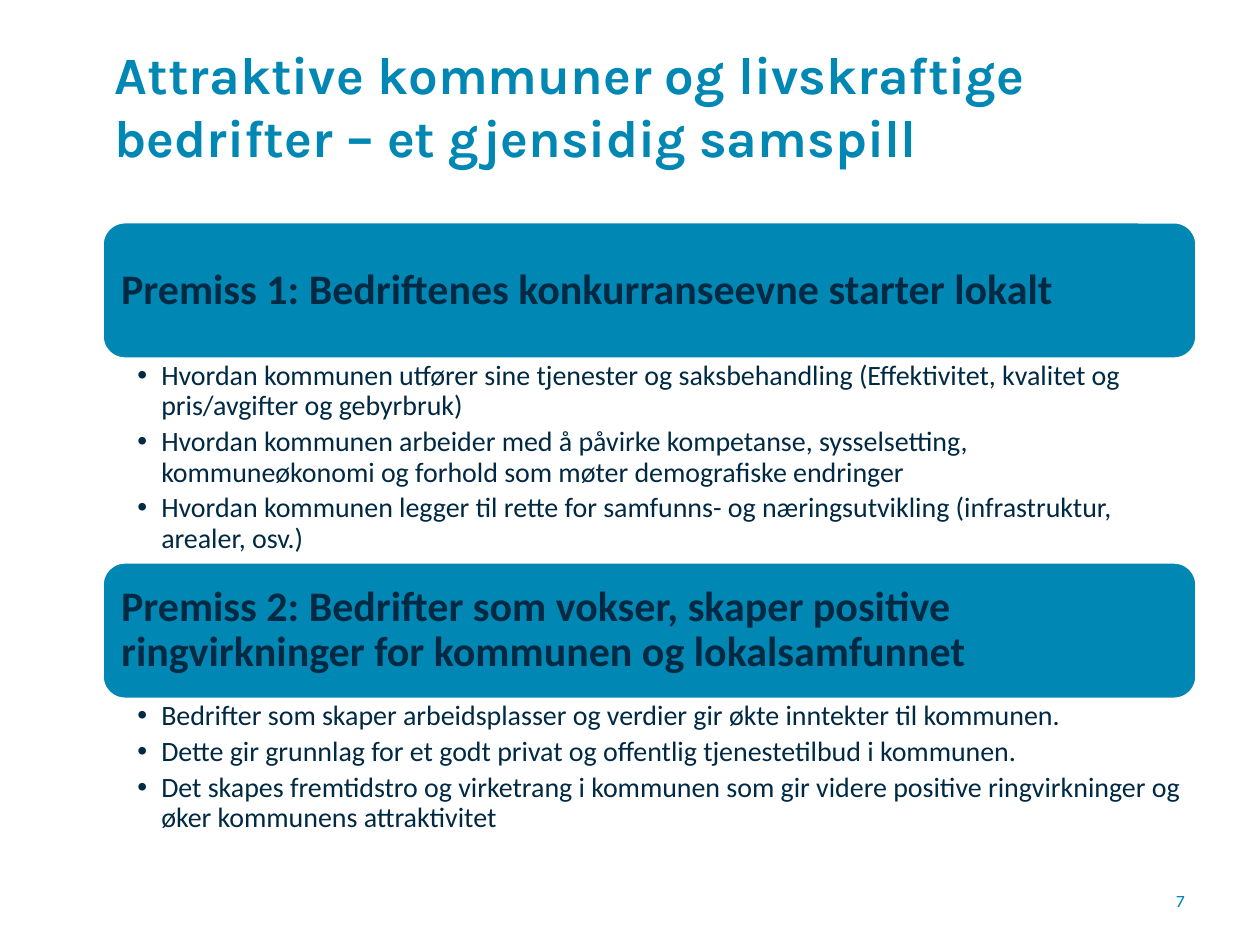
from pptx import Presentation
from pptx.dml.color import RGBColor
from pptx.enum.shapes import MSO_SHAPE as Shape
from pptx.enum.text import MSO_ANCHOR as Anchor, MSO_AUTO_SIZE as Fit, PP_ALIGN as Align
from pptx.oxml import parse_xml
from pptx.oxml.ns import nsdecls
from pptx.util import Inches, Pt

BLUE = RGBColor(0x00, 0x87, 0xB3)
NAVY = RGBColor(0x00, 0x29, 0x43)
WHITE = RGBColor(0xFF, 0xFF, 0xFF)

TITLE = {"name": "Karla", "size": Pt(30), "bold": True}
HEAD = {"name": "Calibri", "size": Pt(24), "bold": True}
ITEM = {"name": "Calibri", "size": Pt(16), "bold": False}
PAGE = {"name": "Karla", "size": Pt(10), "bold": False}

LEFT, WIDTH, BAR = 0.81, 8.69, 1.09

# Top of each section, height of its list, heading, items
PARTS = [
    (1.76, 1.62, "Premiss 1: Bedriftenes konkurranseevne starter lokalt", [
        "Hvordan kommunen utfører sine tjenester og saksbehandling "
        "(Effektivitet, kvalitet og pris/avgifter og gebyrbruk)",
        "Hvordan kommunen arbeider med å påvirke kompetanse, sysselsetting, "
        "kommuneøkonomi og forhold som møter demografiske endringer",
        "Hvordan kommunen legger til rette for samfunns- og næringsutvikling "
        "(infrastruktur, arealer, osv.)",
    ]),
    (4.46, 1.14, "Premiss 2: Bedrifter som vokser, skaper positive "
                 "ringvirkninger for kommunen og lokalsamfunnet", [
        "Bedrifter som skaper arbeidsplasser og verdier gir økte inntekter til kommunen.",
        "Dette gir grunnlag for et godt privat og offentlig tjenestetilbud i kommunen.",
        "Det skapes fremtidstro og virketrang i kommunen som gir videre positive "
        "ringvirkninger og øker kommunens attraktivitet",
    ]),
]


def place(shape, box):
    for key, size in zip(("left", "top", "width", "height"), box):
        setattr(shape, key, Inches(size))


def frame(shape, anchor, pads):
    text = shape.text_frame
    text.word_wrap = True
    text.auto_size = Fit.NONE
    text.vertical_anchor = anchor
    for side, pad in zip(("left", "top", "right", "bottom"), pads):
        setattr(text, f"margin_{side}", Inches(pad))
    return text


def style(para, form, color, align=Align.LEFT, lines=1.0):
    para.alignment = align
    para.line_spacing = lines
    para.space_before = Pt(0)
    for key, value in form.items():
        setattr(para.font, key, value)
    para.font.color.rgb = color


def add_title(slide, box, words):
    title = slide.shapes.title
    place(title, box)
    text = frame(title, Anchor.MIDDLE, (0.1, 0.05, 0.1, 0.05))
    text.text = words
    style(text.paragraphs[0], TITLE, BLUE)


def add_bar(slide, box, words):
    bar = slide.shapes.add_shape(Shape.ROUNDED_RECTANGLE, *map(Inches, box))
    bar.shadow.inherit = False
    bar.fill.solid()
    bar.fill.fore_color.rgb = BLUE
    bar.line.color.rgb = WHITE
    bar.line.width = Pt(2)
    text = frame(bar, Anchor.MIDDLE, (0.1,) * 4)
    text.text = words
    style(text.paragraphs[0], HEAD, NAVY, lines=0.9)


def add_list(body, box, items):
    place(body, box)
    text = frame(body, Anchor.TOP, (0.28, 0.02, 0.12, 0.02))
    text.text = "\n".join(items)
    for para in text.paragraphs:
        props = para._p.get_or_add_pPr()
        props.set("marL", str(Inches(0.19)))
        props.set("indent", str(-Inches(0.19)))
        props.append(parse_xml(f'<a:buChar {nsdecls("a")} char="•"/>'))
        style(para, ITEM, NAVY, lines=0.9)
        para.space_after = Pt(3.2)


def add_part(slide, body, box, head, items):
    left, top, width, height = box
    add_bar(slide, (left, top, width, BAR), head)
    add_list(body, (left, top + BAR, width, height - BAR), items)


def add_page(slide, box, words):
    page = slide.shapes.add_textbox(*map(Inches, box))
    text = frame(page, Anchor.MIDDLE, (0.1, 0.05, 0.1, 0.05))
    text.text = words
    style(text.paragraphs[0], PAGE, BLUE, Align.RIGHT)


def main():
    deck = Presentation()
    deck.slide_width, deck.slide_height = Inches(10), Inches(7.5)
    slide = deck.slides.add_slide(deck.slide_layouts[3])  # title and two lists

    add_title(slide, (LEFT, 0.21, WIDTH, 1.25),
              "Attraktive kommuner og livskraftige bedrifter – et gjensidig samspill")
    for spot, (top, height, head, items) in enumerate(PARTS, 1):
        box = (LEFT, top, WIDTH, BAR + height)
        add_part(slide, slide.placeholders[spot], box, head, items)
    add_page(slide, (8.83, 6.95, 0.67, 0.4), "7")
    deck.save("out.pptx")


if __name__ == "__main__":
    main()
